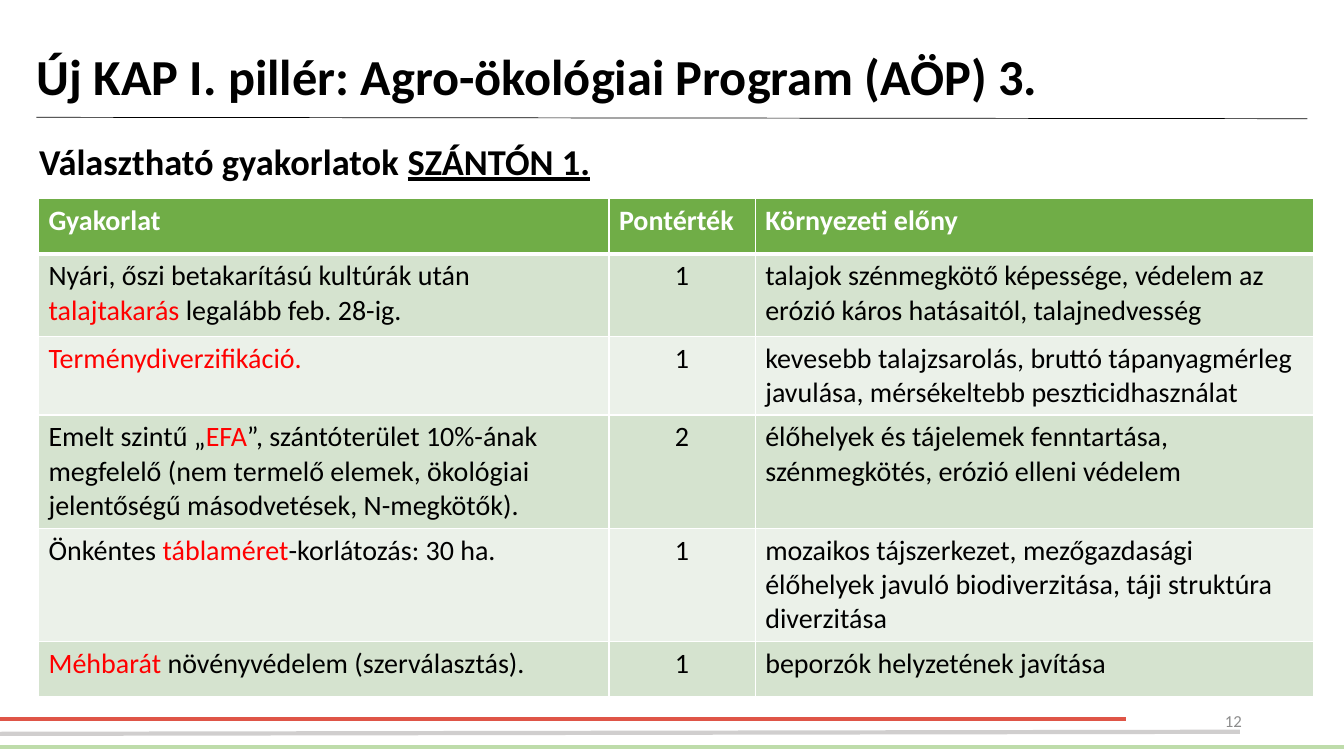
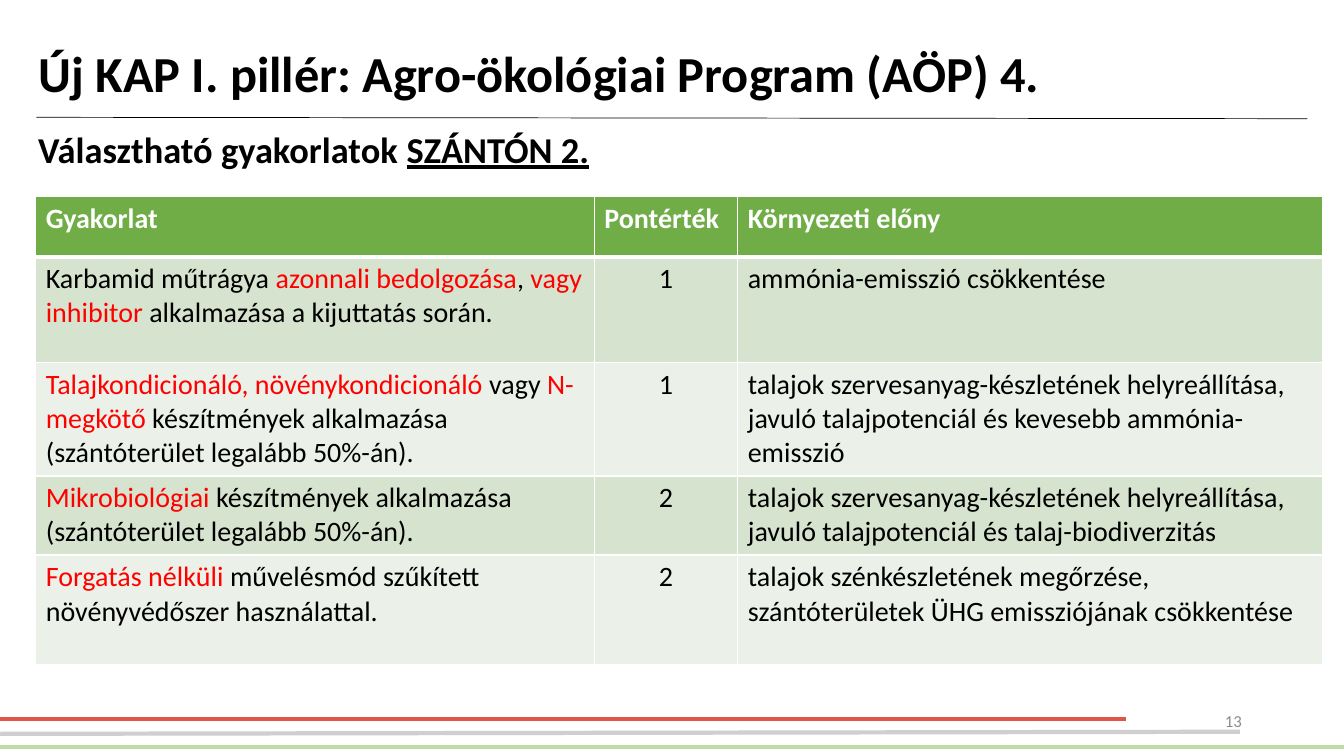
from lxml import etree
from pptx import Presentation
from pptx.dml.color import RGBColor
from pptx.enum.shapes import MSO_CONNECTOR
from pptx.enum.text import MSO_ANCHOR, PP_ALIGN
from pptx.oxml.ns import qn
from pptx.util import Pt

STRAIGHT = MSO_CONNECTOR.STRAIGHT
TOP, MIDDLE = MSO_ANCHOR.TOP, MSO_ANCHOR.MIDDLE
LEFT, CENTER, RIGHT = PP_ALIGN.LEFT, PP_ALIGN.CENTER, PP_ALIGN.RIGHT

BLACK = RGBColor(0x00, 0x00, 0x00)
WHITE = RGBColor(0xFF, 0xFF, 0xFF)
GREY = RGBColor(0x8C, 0x8C, 0x8C)
HIGHLIGHT = RGBColor(0xFF, 0x00, 0x00)
HEADER_GREEN = RGBColor(0x70, 0xAD, 0x47)
BAND_DARK = RGBColor(0xD5, 0xE3, 0xCF)
BAND_LIGHT = RGBColor(0xEB, 0xF1, 0xE9)
FOOTER_RED = RGBColor(0xDF, 0x55, 0x47)
FOOTER_GREEN = RGBColor(0xBE, 0xDC, 0xAA)
FOOTER_GREY = RGBColor(0xD0, 0xCE, 0xCE)

TITLE_FONT = {"name": "Calibri", "size": Pt(36), "bold": True}
SUBTITLE_FONT = {"name": "Calibri", "size": Pt(26), "bold": True}
NUMBER_FONT = {"name": "Calibri", "size": Pt(12), "bold": False}
HEADER_FONT = {"name": "Calibri", "size": Pt(20), "bold": True}
BODY_FONT = {"name": "Calibri", "size": Pt(20), "bold": False}

# Start x, start y, end x, end y, colour, width
SHARED_LINES = [
    (0, 513.4, 804.2, 513.4, FOOTER_RED, 3),
    (0, 533.5, 960, 533.5, FOOTER_GREEN, 3),
    (0, 524.2, 885.6, 522.7, FOOTER_GREY, 3),
    (26, 83.8, 933.8, 84.8, BLACK, 0.5),
]
HEADERS = ("Gyakorlat", "Pontérték", "Környezeti előny")

# Asterisks enclose the highlighted words of a practice
SLIDES = [
    {
        "title": "Új KAP I. pillér: Agro-ökológiai Program (AÖP) 3.",
        "title_at": (19, 4.3),
        "field": "SZÁNTÓN 1.",
        "subtitle_at": (20.9, 95.8),
        "number": "12",
        "table_at": (27.5, 142),
        "columns": (407.5, 104.5, 399),
        "rows": (39.5, 59, 56, 81, 81, 39.5),
        "practices": [
            ("Nyári, őszi betakarítású kultúrák után *talajtakarás* legalább feb. 28-ig.", "1",
             "talajok szénmegkötő képessége, védelem az erózió káros hatásaitól, talajnedvesség"),
            ("*Terménydiverzifikáció.*", "1",
             "kevesebb talajzsarolás, bruttó tápanyagmérleg javulása, "
             "mérsékeltebb peszticidhasználat"),
            ("Emelt szintű „*EFA*”, szántóterület 10%-ának megfelelő (nem termelő elemek, "
             "ökológiai jelentőségű másodvetések, N-megkötők).", "2",
             "élőhelyek és tájelemek fenntartása, szénmegkötés, erózió elleni védelem"),
            ("Önkéntes *táblaméret*-korlátozás: 30 ha.", "1",
             "mozaikos tájszerkezet, mezőgazdasági élőhelyek javuló biodiverzitása, "
             "táji struktúra diverzitása"),
            ("*Méhbarát* növényvédelem (szerválasztás).", "1",
             "beporzók helyzetének javítása"),
        ],
    },
    {
        "title": "Új KAP I. pillér: Agro-ökológiai Program (AÖP) 4.",
        "title_at": (20.4, 2.2),
        "field": "SZÁNTÓN 2.",
        "subtitle_at": (20.2, 87),
        "number": "13",
        "table_at": (25.5, 140.5),
        "columns": (399, 102.5, 417.5),
        "rows": (43, 75.5, 81, 56.5, 78.5),
        "practices": [
            ("Karbamid műtrágya *azonnali bedolgozása*, *vagy inhibitor* alkalmazása "
             "a kijuttatás során.", "1",
             "ammónia-emisszió csökkentése"),
            ("*Talajkondicionáló, növénykondicionáló *vagy *N-megkötő* készítmények "
             "alkalmazása (szántóterület legalább 50%-án).", "1",
             "talajok szervesanyag-készletének helyreállítása, javuló talajpotenciál "
             "és kevesebb ammónia-emisszió"),
            ("*Mikrobiológiai *készítmények alkalmazása (szántóterület legalább 50%-án).", "2",
             "talajok szervesanyag-készletének helyreállítása, javuló talajpotenciál "
             "és talaj-biodiverzitás"),
            ("*Forgatás nélküli *művelésmód szűkített növényvédőszer használattal.", "2",
             "talajok szénkészletének megőrzése, szántóterületek ÜHG emissziójának csökkentése"),
        ],
    },
]


def write_text(frame, text, font, color=BLACK, align=LEFT):
    """Fill the first paragraph; text between asterisks is highlighted."""
    paragraph = frame.paragraphs[0]
    paragraph.alignment = align
    for index, part in enumerate(text.split("*")):
        if part:
            run = paragraph.add_run()
            run.text = part
            for name, value in font.items():
                setattr(run.font, name, value)
            run.font.color.rgb = HIGHLIGHT if index % 2 else color
    return paragraph


def add_text_box(slide, position, size, anchor):
    box = slide.shapes.add_textbox(*map(Pt, position + size))
    box.text_frame.word_wrap = True
    box.text_frame.vertical_anchor = anchor
    return box.text_frame


presentation = Presentation()
presentation.slide_width = Pt(960)
presentation.slide_height = Pt(540)
blank_layout = presentation.slide_layouts[6]

for content in SLIDES:
    slide = presentation.slides.add_slide(blank_layout)

    for x1, y1, x2, y2, color, width in SHARED_LINES:
        line = slide.shapes.add_connector(STRAIGHT, Pt(x1), Pt(y1), Pt(x2), Pt(y2))
        line.line.color.rgb = color
        line.line.width = Pt(width)
        etree.SubElement(line._element.spPr, qn("a:effectLst"))

    title_frame = add_text_box(slide, content["title_at"], (927.4, 104.4), MIDDLE)
    write_text(title_frame, content["title"], TITLE_FONT).line_spacing = 0.9

    subtitle_frame = add_text_box(slide, content["subtitle_at"], (420.5, 38.9), TOP)
    subtitle = write_text(subtitle_frame, "Választható gyakorlatok *" + content["field"],
                          SUBTITLE_FONT)
    field_run = subtitle.runs[-1]
    field_run.font.color.rgb = BLACK
    field_run.font.underline = True

    number_frame = add_text_box(slide, (678.2, 500.4), (216, 28.8), MIDDLE)
    write_text(number_frame, content["number"], NUMBER_FONT, GREY, RIGHT)

    columns, rows = content["columns"], content["rows"]
    left, top = content["table_at"]
    table = slide.shapes.add_table(len(rows), len(columns), Pt(left), Pt(top),
                                   Pt(sum(columns)), Pt(sum(rows))).table
    table.horz_banding = False
    for column, width in zip(table.columns, columns):
        column.width = Pt(width)
    for row, height in zip(table.rows, rows):
        row.height = Pt(height)

    for row_index, texts in enumerate([HEADERS] + content["practices"]):
        is_header = row_index == 0
        band = BAND_DARK if row_index % 2 else BAND_LIGHT
        border_widths = {
            "a:lnL": 1,
            "a:lnR": 1,
            "a:lnT": 3 if row_index == 1 else 1,
            "a:lnB": 3 if is_header else 1,
        }
        for column_index, text in enumerate(texts):
            cell = table.cell(row_index, column_index)
            properties = cell._tc.get_or_add_tcPr()
            for tag, width in border_widths.items():
                border = etree.SubElement(properties, qn(tag), w=str(Pt(width)))
                fill = etree.SubElement(border, qn("a:solidFill"))
                etree.SubElement(fill, qn("a:srgbClr"), val=str(WHITE))
            cell.fill.solid()
            cell.fill.fore_color.rgb = HEADER_GREEN if is_header else band
            write_text(cell.text_frame, text,
                       HEADER_FONT if is_header else BODY_FONT,
                       WHITE if is_header else BLACK,
                       CENTER if column_index == 1 and not is_header else LEFT)

presentation.save("out.pptx")
